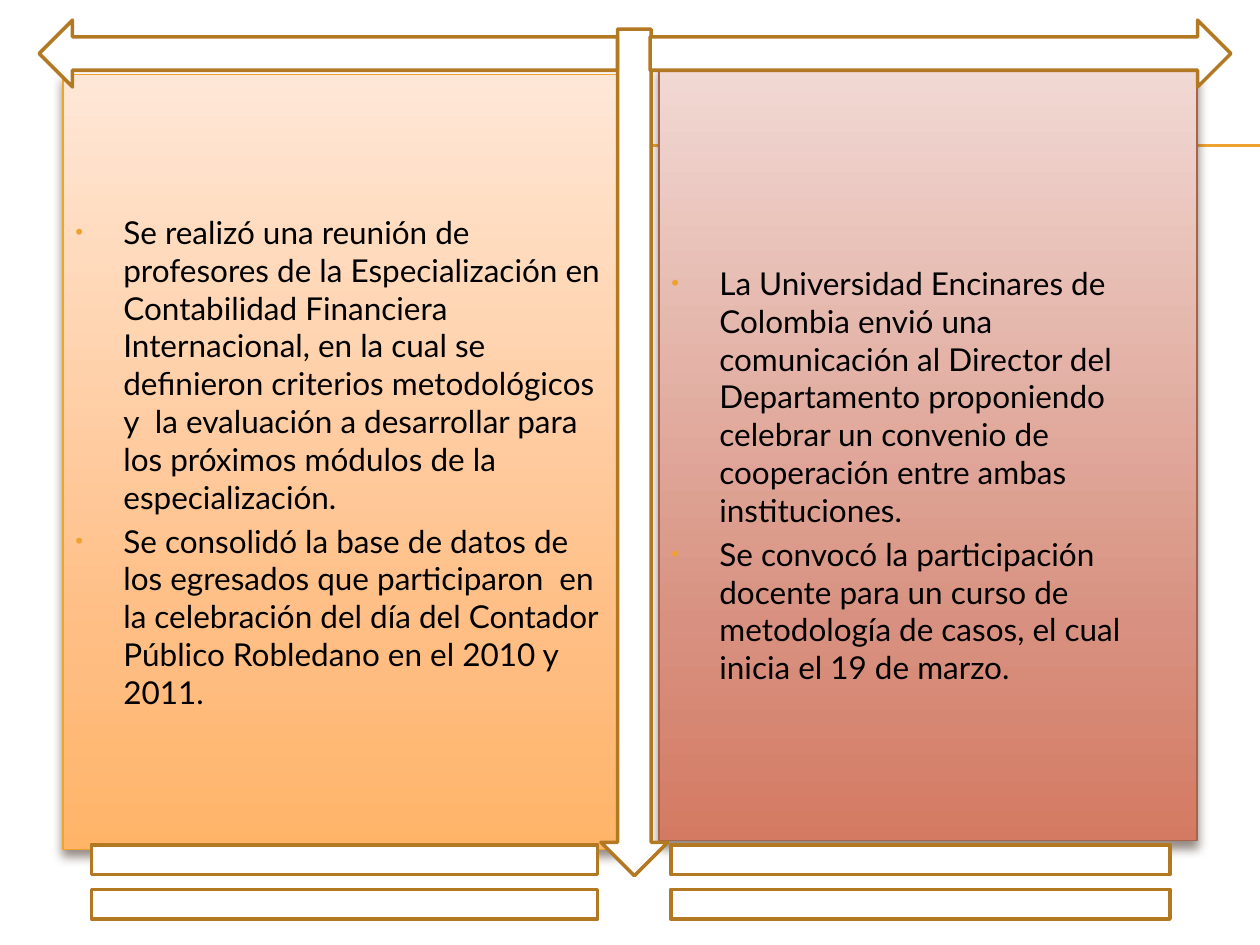
from pptx import Presentation
from pptx.dml.color import RGBColor
from pptx.enum.shapes import MSO_CONNECTOR, MSO_SHAPE
from pptx.enum.text import MSO_ANCHOR, PP_ALIGN
from pptx.oxml.ns import qn
from pptx.oxml.xmlchemy import OxmlElement
from pptx.util import Pt

RECT = MSO_SHAPE.RECTANGLE
DOWN = MSO_SHAPE.DOWN_ARROW
RIGHT = MSO_SHAPE.RIGHT_ARROW
LEFT = MSO_SHAPE.LEFT_ARROW
EQUAL = MSO_SHAPE.MATH_EQUAL
STRAIGHT = MSO_CONNECTOR.STRAIGHT
MIDDLE = MSO_ANCHOR.MIDDLE
START = PP_ALIGN.LEFT

WHITE = RGBColor(0xFF, 0xFF, 0xFF)
BLACK = RGBColor(0, 0, 0)
GOLD = RGBColor(0xF0, 0xA2, 0x2E)
BROWN = RGBColor(0xB2, 0x78, 0x22)
RUST = RGBColor(0xA5, 0x64, 0x4E)
SHADE = RGBColor(0x4E, 0x3B, 0x30)
ORANGES = [RGBColor(0xFF, 0xE7, 0xD7), RGBColor(0xFF, 0xBE, 0x84),
           RGBColor(0xFF, 0xB4, 0x68)]
REDS = [RGBColor(0xF1, 0xD9, 0xD4), RGBColor(0xD8, 0x91, 0x80),
        RGBColor(0xD4, 0x7A, 0x62)]
STOPS = [0, 72, 100]

FRAME = {"word_wrap": True, "vertical_anchor": MIDDLE,
         "margin_left": Pt(7.2), "margin_right": Pt(7.2),
         "margin_bottom": Pt(3.6)}
FONT = {"name": "Lato", "size": Pt(18)}
INDENT = 27.4
GAP = 3.6

LEFT_TEXT = [
    "Se realizó una reunión de profesores de la Especialización en "
    "Contabilidad Financiera Internacional, en la cual se definieron "
    "criterios metodológicos y  la evaluación a desarrollar para los "
    "próximos módulos de la especialización.",
    "Se consolidó la base de datos de los egresados que participaron  en la "
    "celebración del día del Contador Público Robledano en el 2010 y 2011.",
]
RIGHT_TEXT = [
    "La Universidad Encinares de Colombia envió una comunicación al Director "
    "del Departamento proponiendo celebrar un convenio de cooperación entre "
    "ambas instituciones.",
    "Se convocó la participación docente para un curso de metodología de "
    "casos, el cual inicia el 19 de marzo.",
]


def put(item, values):
    for key, value in values.items():
        setattr(item, key, value)


def add(parent, tag, **attrs):
    """Append an XML child with the given attributes."""
    node = OxmlElement(tag)
    for key, value in attrs.items():
        node.set(key, str(value))
    parent.append(node)
    return node


def add_rule(slide, top):
    rule = slide.shapes.add_connector(
        STRAIGHT, Pt(40.3), Pt(top), Pt(720), Pt(top))
    rule.line.color.rgb = GOLD
    rule.line.width = Pt(0.75)
    add(rule._element.spPr, "a:effectLst")


def add_box(slide, kind, box, color, width):
    shape = slide.shapes.add_shape(kind, *map(Pt, box))
    shape.shadow.inherit = False
    shape.line.color.rgb = color
    shape.line.width = Pt(width)
    return shape


def add_sign(slide, kind, box):
    shape = add_box(slide, kind, box, BROWN, 2)
    shape.fill.solid()
    shape.fill.fore_color.rgb = WHITE


def shade(shape, colors):
    """Give a top-down gradient and a soft shadow below."""
    shape.fill.gradient()
    shape.fill.gradient_angle = 270
    props = shape._element.spPr
    stops = props.find(qn("a:gradFill")).find(qn("a:gsLst"))
    for old in list(stops):
        stops.remove(old)
    for pos, color in zip(STOPS, colors):
        add(add(stops, "a:gs", pos=pos * 1000), "a:srgbClr", val=color)
    glow = add(props.find(qn("a:effectLst")), "a:outerShdw", blurRad=Pt(6),
               dist=Pt(4), dir=5400000, algn="ctr", rotWithShape=0)
    add(add(glow, "a:srgbClr", val=SHADE), "a:alpha", val=60000)


def add_bullet(para):
    props = para._p.get_or_add_pPr()
    props.set("marL", str(Pt(INDENT)))
    props.set("indent", str(-Pt(INDENT)))
    add(add(props, "a:buClr"), "a:srgbClr", val=GOLD)
    add(props, "a:buSzPct", val=70000)
    add(props, "a:buFont", typeface="Arial")
    add(props, "a:buChar", char="•")


def add_panel(slide, box, colors, edge, texts, inset):
    shape = add_box(slide, RECT, box, edge, 0.79)
    shade(shape, colors)
    frame = shape.text_frame
    put(frame, FRAME)
    frame.margin_top = Pt(inset)
    for i, text in enumerate(texts):
        para = frame.add_paragraph() if i else frame.paragraphs[0]
        para.alignment = START
        para.space_before = Pt(GAP if i else 0)
        add_bullet(para)
        run = para.add_run()
        run.text = text
        put(run.font, FONT)
        run.font.color.rgb = BLACK


def main():
    deck = Presentation()
    deck.slide_width, deck.slide_height = Pt(720), Pt(540)
    slide = deck.slides.add_slide(deck.slide_layouts[6])
    for top in (82.8, 83.5):
        add_rule(slide, top)
    add_panel(slide, (36, 42.5, 318.2, 442.8), ORANGES, GOLD, LEFT_TEXT, 3.6)
    add_panel(slide, (376.6, 37.4, 307.4, 442.8), REDS, RUST, RIGHT_TEXT, 28.8)
    for kind, box in (
        (DOWN, (343.4, 16.6, 38.2, 483.8)),
        (RIGHT, (371.5, 11.5, 331.9, 38.2)),
        (LEFT, (22.3, 11.5, 330.5, 38.2)),
        (EQUAL, (0, 468, 393.8, 72)),
        (EQUAL, (331.9, 468, 388.1, 72)),
    ):
        add_sign(slide, kind, box)
    deck.save("out.pptx")


if __name__ == "__main__":
    main()
